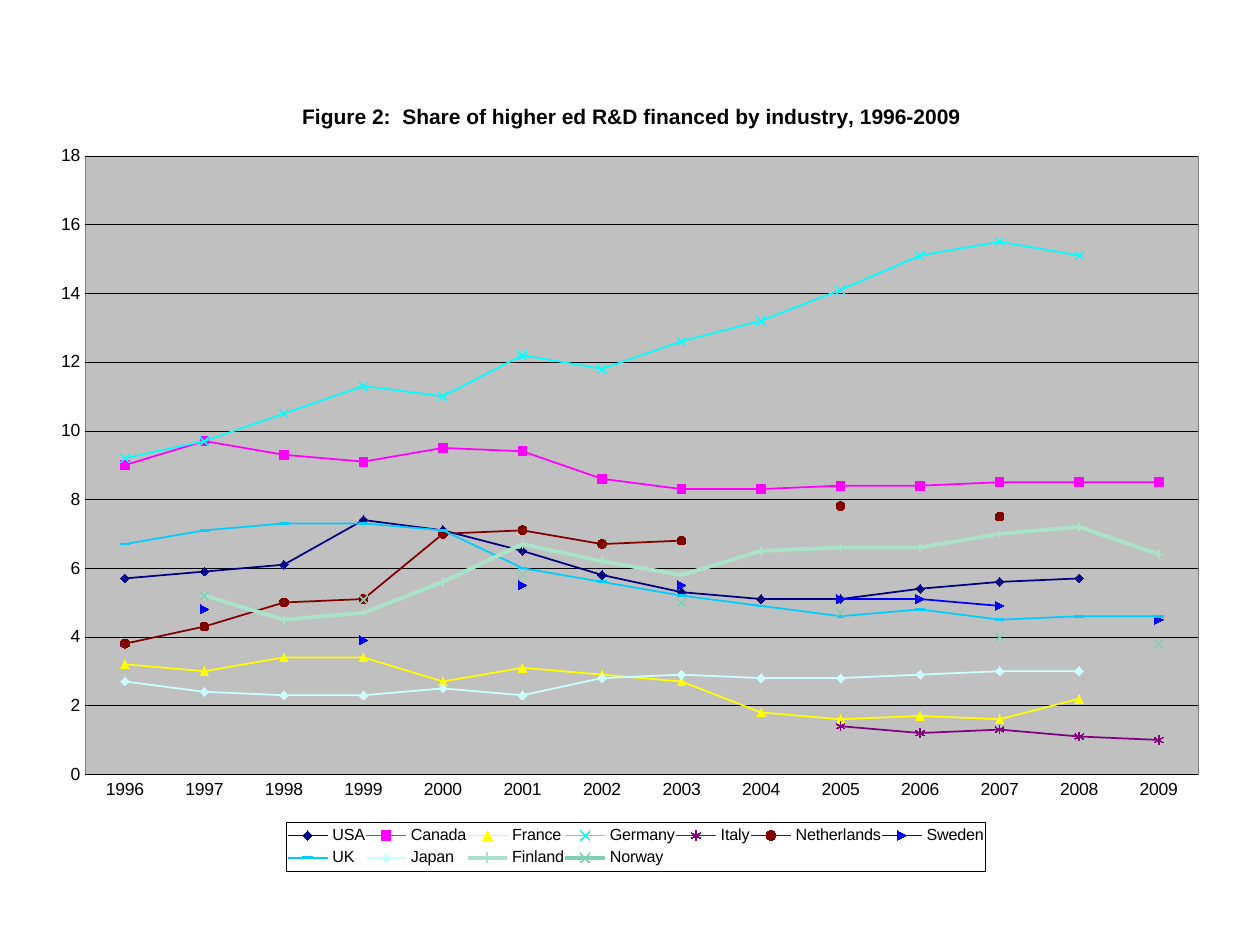
from lxml import etree
from pptx import Presentation
from pptx import util as u
from pptx.chart.data import CategoryChartData
from pptx.dml.color import RGBColor
from pptx.enum import chart as kinds
from pptx.oxml.ns import qn

YEARS = [str(year) for year in range(1996, 2010)]
MARK = kinds.XL_MARKER_STYLE
GAP = None

COUNTRIES = {
    "USA": ("000080", 1, MARK.DIAMOND, True,
            [5.7, 5.9, 6.1, 7.4, 7.1, 6.5, 5.8, 5.3, 5.1, 5.1, 5.4, 5.6, 5.7, GAP]),
    "Canada": ("FF00FF", 1, MARK.SQUARE, True,
               [9, 9.7, 9.3, 9.1, 9.5, 9.4, 8.6, 8.3, 8.3, 8.4, 8.4, 8.5, 8.5, 8.5]),
    "France": ("FFFF00", 1, MARK.TRIANGLE, True,
               [3.2, 3, 3.4, 3.4, 2.7, 3.1, 2.9, 2.7, 1.8, 1.6, 1.7, 1.6, 2.2, GAP]),
    "Germany": ("00FFFF", 1, MARK.X, False,
                [9.2, 9.7, 10.5, 11.3, 11, 12.2, 11.8, 12.6, 13.2, 14.1, 15.1, 15.5, 15.1, GAP]),
    "Italy": ("800080", 1, MARK.STAR, False,
              [3.8] + [GAP] * 8 + [1.4, 1.2, 1.3, 1.1, 1]),
    "Netherlands": ("800000", 1, MARK.CIRCLE, True,
                    [3.8, 4.3, 5, 5.1, 7, 7.1, 6.7, 6.8, GAP, 7.8, GAP, 7.5, GAP, GAP]),
    "Sweden": ("0000FF", 1, MARK.DOT, False,
               [GAP, 4.8, GAP, 3.9, GAP, 5.5, GAP, 5.5, GAP, 5.1, 5.1, 4.9, GAP, 4.5]),
    "UK": ("00CCFF", 1, MARK.DASH, False,
           [6.7, 7.1, 7.3, 7.3, 7.1, 6, 5.6, 5.2, 4.9, 4.6, 4.8, 4.5, 4.6, 4.6]),
    "Japan": ("CCFFFF", 1, MARK.DIAMOND, True,
              [2.7, 2.4, 2.3, 2.3, 2.5, 2.3, 2.8, 2.9, 2.8, 2.8, 2.9, 3, 3, GAP]),
    "Finland": ("AAE2CA", 2.25, MARK.PLUS, False,
                [GAP, 5.2, 4.5, 4.7, 5.6, 6.7, 6.2, 5.8, 6.5, 6.6, 6.6, 7, 7.2, 6.4]),
    "Norway": ("7FD0B0", 2.25, MARK.X, False,
               [GAP, 5.2, GAP, 5.1, GAP, 5.8, GAP, 5, GAP, 4.7, GAP, 4, GAP, 3.8]),
}


def colour(value):
    return RGBColor.from_string(value)


def assign(target, values):
    for name, value in values.items():
        setattr(target, name, value)


class ChartPage:
    """Holds the deck's style and current slide, and draws each part of a line chart."""

    font, ink, hairline = "Arial", "000000", 0.25

    def __init__(self, width, height):
        self.deck = Presentation()
        assign(self.deck, {"slide_width": u.Inches(width), "slide_height": u.Inches(height)})
        self.page = self.deck.slides.add_slide(self.deck.slide_layouts[6])

    def style_font(self, font, size, bold=False):
        assign(font, {"name": self.font, "size": u.Pt(size), "bold": bold})
        font.color.rgb = colour(self.ink)

    def stroke(self, line, shade, width):
        line.color.rgb = colour(shade)
        line.width = u.Pt(width)

    def place(self, parent, shares, inner=False):
        old = parent.find(qn("c:layout"))
        if old is not None:
            parent.remove(old)
        layout = etree.Element(qn("c:layout"))
        manual = etree.SubElement(layout, qn("c:manualLayout"))
        settings = {"layoutTarget": "inner"} if inner else {}
        settings.update(xMode="edge", yMode="edge", **shares)
        for name, value in settings.items():
            etree.SubElement(manual, qn("c:" + name)).set("val", str(value))
        overlay = parent.find(qn("c:overlay"))
        parent.insert(0 if overlay is None else parent.index(overlay), layout)

    def frame(self, fill, shade):
        properties = etree.Element(qn("c:spPr"))
        border = etree.Element(qn("a:ln"), w=str(u.Pt(self.hairline)))
        for parent, value in ((properties, fill), (border, shade)):
            solid = etree.SubElement(parent, qn("a:solidFill"))
            etree.SubElement(solid, qn("a:srgbClr"), val=value)
        properties.append(border)
        return properties

    def chart(self, left, top, width, height):
        data = CategoryChartData()
        data.categories = YEARS
        for name, (*_, values) in COUNTRIES.items():
            data.add_series(name, values)
        across, down = self.deck.slide_width, self.deck.slide_height
        box = self.page.shapes.add_chart(
            kinds.XL_CHART_TYPE.LINE_MARKERS, int(left * across), int(top * down),
            int(width * across), int(height * down), data)
        self.graph = box.chart
        self.style_font(self.graph.font, 10)
        self.graph.plots[0].vary_by_categories = False

    def title(self, words, size, shares):
        self.graph.has_title = True
        para = self.graph.chart_title.text_frame.paragraphs[0]
        span = para.add_run()
        span.text = words
        self.style_font(span.font, size, True)
        self.place(self.graph.element.find(".//" + qn("c:title")), shares)

    def axes(self, top, step):
        years, shares = self.graph.category_axis, self.graph.value_axis
        for axis in (years, shares):
            assign(axis, {"major_tick_mark": kinds.XL_TICK_MARK.NONE,
                          "minor_tick_mark": kinds.XL_TICK_MARK.NONE})
            self.style_font(axis.tick_labels.font, 10)
        assign(shares, {"minimum_scale": 0, "maximum_scale": top, "major_unit": step,
                        "has_major_gridlines": True})
        assign(shares.tick_labels, {"number_format": "General",
                                    "number_format_is_linked": False})
        shares.format.line.fill.background()
        for line in (years.format.line, shares.major_gridlines.format.line):
            self.stroke(line, self.ink, self.hairline)

    def plot(self, fill, border, shares):
        area = self.graph.element.find(".//" + qn("c:plotArea"))
        self.place(area, shares, inner=True)
        area.append(self.frame(fill, border))

    def lines(self):
        for series in self.graph.plots[0].series:
            shade, width, style, filled, _ = COUNTRIES[series.name]
            series.smooth = False
            self.stroke(series.format.line, shade, width)
            assign(series.marker, {"style": style, "size": 5})
            look = series.marker.format
            self.stroke(look.line, shade, 1)
            if filled:
                look.fill.solid()
                look.fill.fore_color.rgb = colour(shade)
            else:
                look.fill.background()

    def legend(self, size, shares):
        self.graph.has_legend = True
        key = self.graph.legend
        assign(key, {"position": kinds.XL_LEGEND_POSITION.BOTTOM, "include_in_layout": False})
        self.style_font(key.font, size)
        element = self.graph.element.find(".//" + qn("c:legend"))
        self.place(element, shares)
        element.find(qn("c:overlay")).addnext(self.frame("FFFFFF", self.ink))


def main():
    slide = ChartPage(10, 7.5)
    slide.chart(0.03, 0.08, 0.94, 0.85)
    slide.title("Figure 2:  Share of higher ed R&D financed by industry, 1996-2009",
                12, {"x": 0.22, "y": 0.03})
    slide.axes(18, 2)
    slide.plot("C0C0C0", "808080", {"x": 0.04, "y": 0.1, "w": 0.94, "h": 0.77})
    slide.lines()
    slide.legend(9.2, {"x": 0.21, "y": 0.93, "w": 0.59, "h": 0.06})
    slide.deck.save("out.pptx")


if __name__ == "__main__":
    main()
